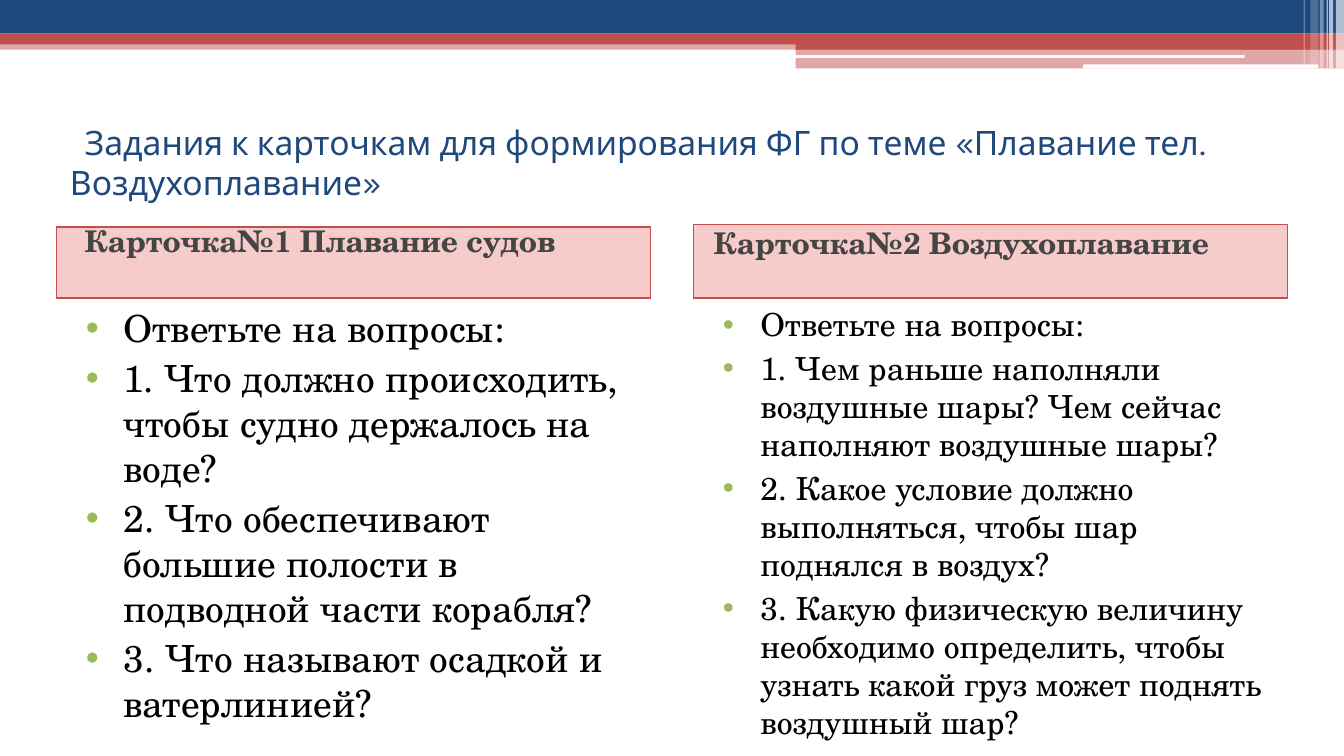
from lxml import etree
from pptx import Presentation
from pptx import util as u
from pptx.dml.color import RGBColor
from pptx.enum import shapes, text
from pptx.oxml.ns import qn

COLORS = {"navy": "1F497D", "red": "C0504D", "white": "FFFFFF", "card": "DD3530",
          "heading": "454545", "black": "000000", "bullet": "9BBB59"}
SERIF = "TeX Gyre Schola"
RECT = shapes.MSO_SHAPE.RECTANGLE
ROUNDED = shapes.MSO_SHAPE.ROUNDED_RECTANGLE


def rgb(name):
    return RGBColor.from_string(COLORS[name])


def add_bar(s, box, color, alpha=100, kind=RECT):
    sp = s.shapes.add_shape(kind, *map(u.Inches, box))
    sp.shadow.inherit = False
    sp.fill.solid()
    sp.fill.fore_color.rgb = rgb(color)
    sp.line.fill.background()
    if alpha < 100:
        clr = sp._element.spPr.find(".//" + qn("a:srgbClr"))
        etree.SubElement(clr, qn("a:alpha")).set("val", str(alpha * 1000))
    return sp


def set_font(p, size, color, name, bold=False):
    for r in p.runs:
        r.font.size = u.Pt(size)
        r.font.name = name
        r.font.bold = bold
        r.font.color.rgb = rgb(color)


def add_bullet(p):
    pPr = p._p.get_or_add_pPr()
    pPr.set("marL", str(u.Inches(0.4)))
    pPr.set("indent", str(u.Inches(-0.28)))
    clr = etree.SubElement(pPr, qn("a:buClr"))
    etree.SubElement(clr, qn("a:srgbClr")).set("val", COLORS["bullet"])
    etree.SubElement(pPr, qn("a:buFont")).set("typeface", "Arial")
    etree.SubElement(pPr, qn("a:buChar")).set("char", "•")


def add_banner(s, x, y, w):
    split, height = 5.92, 0.51
    right = w - split
    add_bar(s, (x, y + 0.3, w, 0.07), "red", 50)
    add_bar(s, (x, y, w, 0.25), "navy")
    add_bar(s, (x, y + 0.25, w, 0.08), "red")
    add_bar(s, (x + split, y + 0.3, right, 0.07), "red")
    add_bar(s, (x + split, y + 0.36, right, 0.15), "red", 50)
    add_bar(s, (x + 5.91, y + 0.41, 3.35, 0.02), "white", kind=ROUNDED)
    add_bar(s, (x + 8.06, y + 0.48, 1.75, 0.03), "white", kind=ROUNDED)
    stripes = [(0.06, 0.06, height, 65), (0.11, 0.03, height, 65),
               (0.13, 0.01, height, 60), (0.18, 0.03, height, 40),
               (0.25, 0.06, 0.48, 20), (0.3, 0.01, 0.48, 30)]
    for offset, width, h, alpha in stripes:
        add_bar(s, (x + w - offset, y, width, h), "white", alpha)


def set_title(s, box, title):
    sp = s.shapes.title
    sp.left, sp.top, sp.width, sp.height = map(u.Inches, box)
    tf = sp.text_frame
    tf.text = title
    tf.word_wrap = True
    tf.auto_size = text.MSO_AUTO_SIZE.NONE
    tf.vertical_anchor = text.MSO_ANCHOR.MIDDLE
    p = tf.paragraphs[0]
    p.alignment = text.PP_ALIGN.LEFT
    p._p.get_or_add_pPr().set("indent", str(u.Inches(0.11)))
    set_font(p, 18, "navy", "Karla")


def add_heading(s, box, heading, left_inset, bottom_inset):
    sp = add_bar(s, box, "card", 25)
    sp.line.color.rgb = rgb("red")
    sp.line.width = u.Pt(1)
    tf = sp.text_frame
    tf.text = heading
    tf.word_wrap = True
    tf.vertical_anchor = text.MSO_ANCHOR.MIDDLE
    tf.margin_left = u.Inches(left_inset)
    tf.margin_top = 0
    tf.margin_bottom = u.Inches(bottom_inset)
    p = tf.paragraphs[0]
    p.alignment = text.PP_ALIGN.LEFT
    set_font(p, 16, "heading", SERIF, True)


def add_questions(s, box, questions, size):
    tf = s.shapes.add_textbox(*map(u.Inches, box)).text_frame
    tf.word_wrap = True
    tf.text = "\n".join(questions)
    for i, p in enumerate(tf.paragraphs):
        add_bullet(p)
        if i:
            p.space_before = u.Pt(3)
        set_font(p, size, "black", SERIF)


def add_card(s, box, heading, left_inset, bottom_inset, questions, size):
    x, y, w, h = box
    body_top = 2.22
    add_heading(s, (x, y, w, body_top - y), heading, left_inset, bottom_inset)
    add_questions(s, (x, body_top, w, y + h - body_top),
                  ["Ответьте на вопросы:"] + questions, size)


def main():
    prs = Presentation()
    prs.slide_width = u.Inches(10)
    prs.slide_height = prs.slide_width * 9 // 16
    s = prs.slides.add_slide(prs.slide_layouts[5])
    add_banner(s, 0, 0, 10)
    set_title(s, (0.42, 0.94, 9.17, 0.53),
              "Задания к карточкам для формирования ФГ по теме "
              "«Плавание тел. Воздухоплавание»")
    add_card(s, (0.42, 1.69, 4.42, 3.72), "Карточка№1 Плавание судов", 0.21, 0.33, [
        "1. Что должно происходить, чтобы судно держалось на воде?",
        "2. Что обеспечивают большие полости в подводной части корабля?",
        "3. Что называют осадкой и ватерлинией?"], 20)
    add_card(s, (5.16, 1.67, 4.42, 3.74), "Карточка№2 Воздухоплавание", 0.15, 0.28, [
        "1. Чем раньше наполняли воздушные шары? Чем сейчас наполняют воздушные шары?",
        "2. Какое условие должно выполняться, чтобы шар поднялся в воздух?",
        "3. Какую физическую величину необходимо определить, чтобы узнать "
        "какой груз может поднять воздушный шар?"], 17)
    prs.save("out.pptx")


if __name__ == "__main__":
    main()
